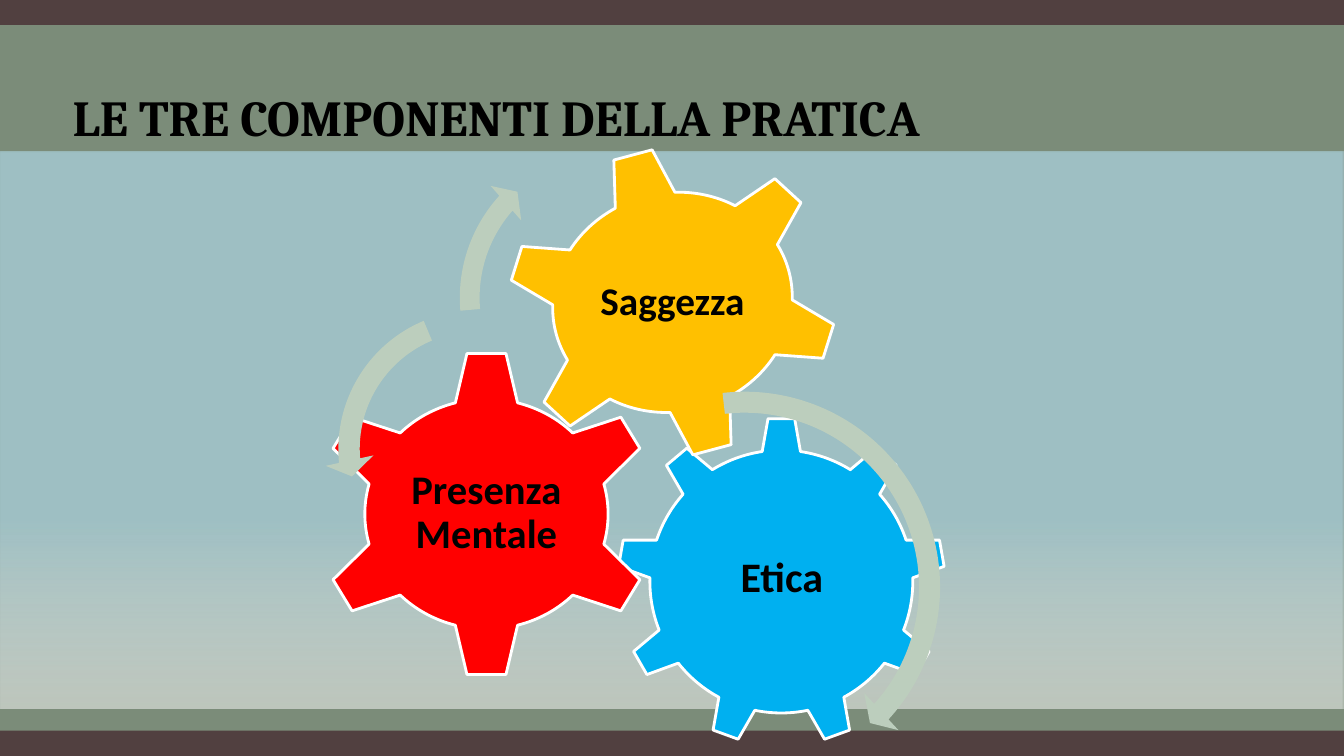
from lxml import etree
from pptx import Presentation
from pptx import util as u
from pptx.dml.color import RGBColor
from pptx.enum import shapes, text
from pptx.oxml.ns import qn

Inches = u.Inches
Preset = shapes.MSO_SHAPE


def color(value):
    return RGBColor.from_string(value)


def add_plain_shape(preset, bounds, fill):
    shape = page.shapes.add_shape(preset, *map(Inches, bounds))
    shape.shadow.inherit = False
    shape.line.fill.background()
    if fill:
        shape.fill.solid()
        shape.fill.fore_color.rgb = color(fill)
    return shape


deck = Presentation()
deck.slide_width, deck.slide_height = Inches(13.33), Inches(7.5)
page = deck.slides.add_slide(deck.slide_layouts[5])

# Background bands, with a gradient on the content area
add_plain_shape(Preset.RECTANGLE, (0, 0, 13.33, 7.5), "514040")
green_band = add_plain_shape(Preset.RECTANGLE, (0, 0.25, 13.33, 7), "809580")
content_area = add_plain_shape(Preset.RECTANGLE, (0, 1.5, 13.33, 5.53), None)
content_area.fill.gradient()
content_area.fill.gradient_angle = 270
gradient = (("A8CDD7", 0.66), ("FFFFFF", 1))
for stop, (value, position) in zip(content_area.fill.gradient_stops, gradient):
    stop.color.rgb = color(value)
    stop.position = position

# Opacity of each band colour, in percent
for band, opacities in ((green_band, [90]), (content_area, [79, 50])):
    for node, opacity in zip(band._element.spPr.iter(qn("a:srgbClr")), opacities):
        etree.SubElement(node, qn("a:alpha"), val=str(opacity * 1000))

# Title, placed in front of the bands
title = page.shapes.title
page.shapes._spTree.append(title._element)
title_format = dict(left=0.67, top=0.25, width=12, height=1.25)
for name, value in title_format.items():
    setattr(title, name, Inches(value))
title.text_frame.text = "LE TRE COMPONENTI DELLA PRATICA"
title.text_frame.vertical_anchor = text.MSO_ANCHOR.BOTTOM
title.text_frame.auto_size = text.MSO_AUTO_SIZE.NONE
for side in ("left", "top", "right", "bottom"):
    setattr(title.text_frame, f"margin_{side}", Inches(0.05))
para = title.text_frame.paragraphs[0]
para.alignment = text.PP_ALIGN.LEFT
title_font = dict(name="Cambria", size=u.Pt(36), bold=True)
for name, value in title_font.items():
    setattr(para.font, name, value)
para.font.color.rgb = color("000000")

# Gears with upright labels
gears = (
    ("Etica", 30, Preset.GEAR_9, "00B0F0", 0,
     (6.12, 4.14, 3.26, 3.26), (6.78, 4.9, 1.95, 1.68)),
    ("Presenza Mentale", 29, Preset.GEAR_6, "FF0000", 0,
     (3.13, 3.47, 3.39, 3.26), (3.97, 4.29, 1.71, 1.61)),
    ("Saggezza", 28, Preset.GEAR_6, "FFC000", 345,
     (5.01, 1.45, 3.32, 3.1), (5.75, 2.12, 1.84, 1.76)),
)
for label, size, preset, fill, rotation, bounds, label_bounds in gears:
    gear = add_plain_shape(preset, bounds, fill)
    gear.rotation = rotation
    gear.line.color.rgb = color("FFFFFF")
    gear.line.width = u.Pt(2)

    box = page.shapes.add_textbox(*map(Inches, label_bounds))
    frame = box.text_frame
    frame.word_wrap = True
    frame.vertical_anchor = text.MSO_ANCHOR.MIDDLE
    for side in ("left", "top", "right", "bottom"):
        setattr(frame, f"margin_{side}", Inches(0.04))
    para = frame.paragraphs[0]
    para.alignment = text.PP_ALIGN.CENTER
    para.line_spacing = 0.9
    span = para.add_run()
    span.text = label
    label_font = dict(name="Calibri", size=u.Pt(size), bold=True)
    for name, value in label_font.items():
        setattr(span.font, name, value)
    span.font.color.rgb = color("000000")

# Rotation arrows around the gears
arrows = (
    (Preset.CIRCULAR_ARROW, (5.3, 3.74, 4.17, 4.17),
     (0.05, 2.99, 25.39, 158.12, 0.06)),
    (Preset.LEFT_CIRCULAR_ARROW, (3.22, 2.94, 3.03, 3.03),
     (0.07, 4.3, 104.89, 148.38, 0.08)),
    (Preset.CIRCULAR_ARROW, (4.43, 1.32, 3.27, 3.27),
     (0.06, 3.94, 133.14, 105.08, 0.07)),
)
for preset, bounds, adjustments in arrows:
    arrow = add_plain_shape(preset, bounds, "BCCEBD")
    for index, value in enumerate(adjustments):
        arrow.adjustments[index] = value

deck.save("out.pptx")
